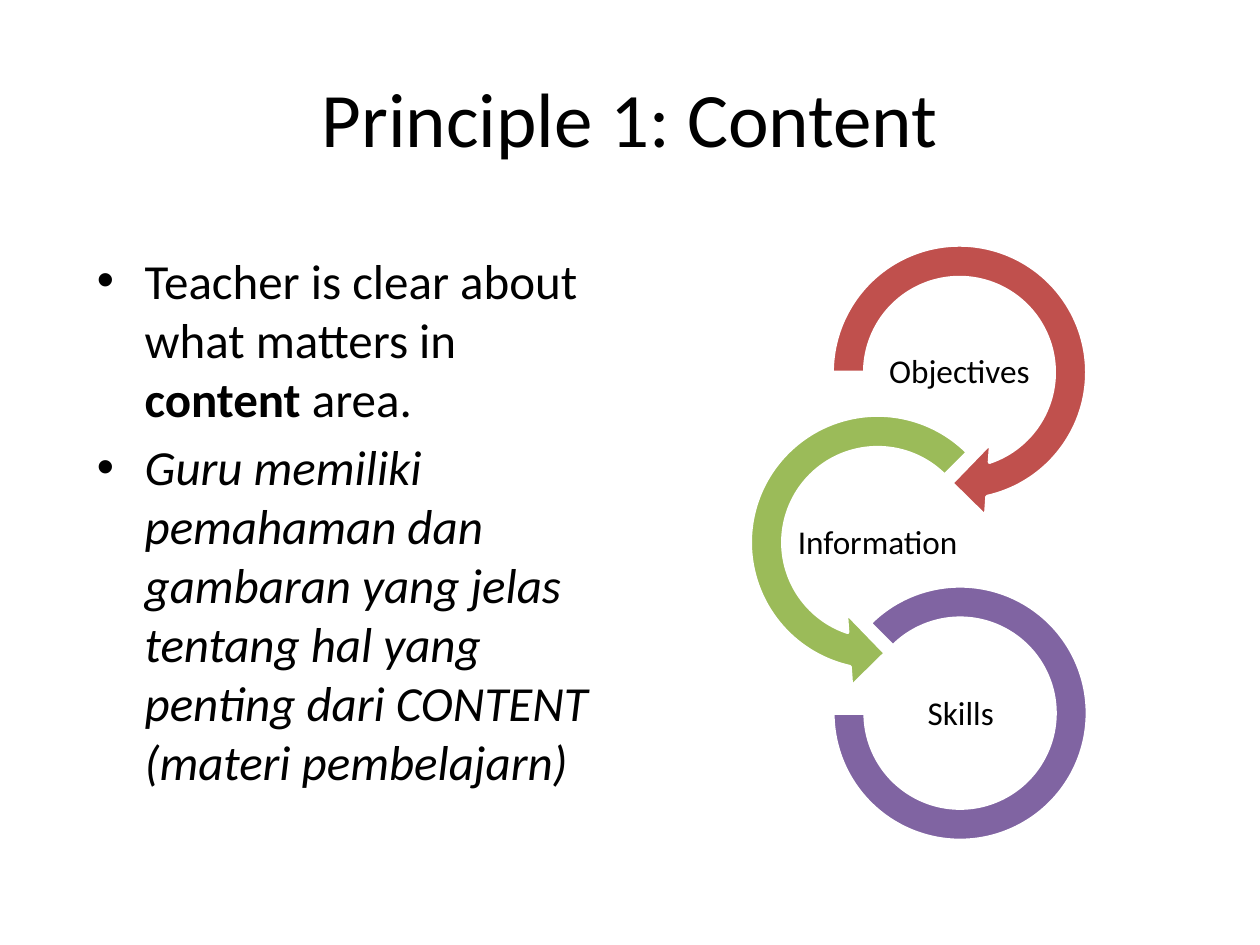
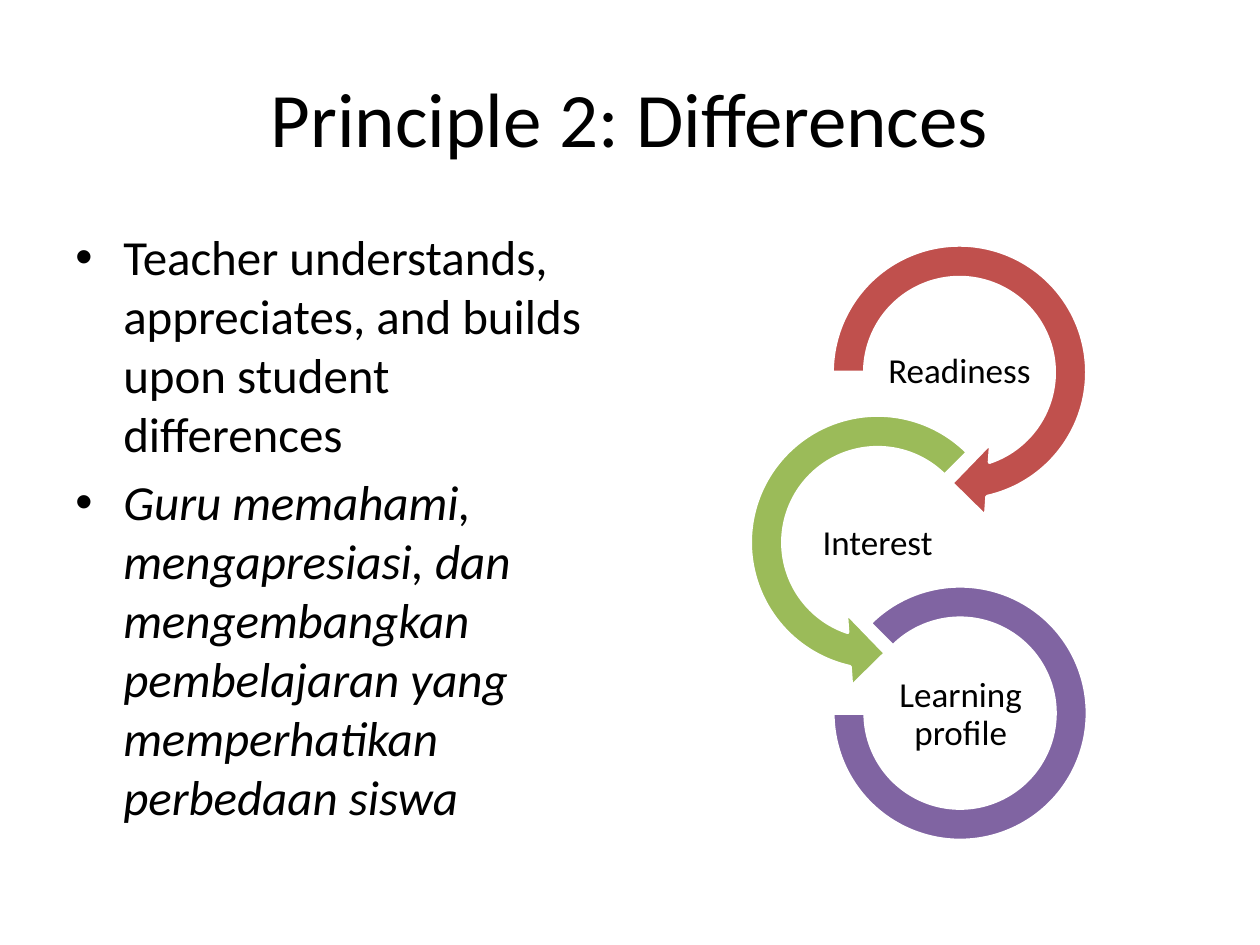
from lxml.etree import SubElement
from pptx import Presentation
from pptx.dml.color import RGBColor
from pptx.enum.shapes import MSO_SHAPE
from pptx.enum.text import MSO_ANCHOR, PP_ALIGN
from pptx.oxml.ns import qn
from pptx.util import Inches, Pt

FONT = "Calibri"
BLACK, WHITE = "000000", "FFFFFF"
TITLE_BOX = (0.5, 0.3, 9, 1.25)
LABEL_SIZE = (1.31, 0.65)

# Each body paragraph is a list of (text, style) runs.
SLIDES = [
    {
        "title": "Principle 1: Content",
        "body_box": (0.67, 1.94, 4.25, 4.65),
        "body": [
            [("Teacher is clear about what matters in ", ""),
             ("content", "bold"),
             (" area.", "")],
            [("Guru memiliki pemahaman dan gambaran yang jelas tentang hal "
              "yang penting dari CONTENT (materi pembelajarn)", "italic")],
        ],
        "labels": ["Objectives", "Information", "Skills"],
        "label_points": 19,
    },
    {
        "title": "Principle 2: Differences",
        "body_box": (0.5, 1.75, 4.42, 4.95),
        "body": [
            [("Teacher understands, appreciates, and builds upon student "
              "differences", "")],
            [("Guru memahami, mengapresiasi, dan mengembangkan pembelajaran "
              "yang memperhatikan perbedaan siswa", "italic")],
        ],
        "labels": ["Readiness", "Interest", "Learning profile"],
        "label_points": 20,
    },
]

# Ring: preset, box, adjustments, colour, label left and top
RINGS = [
    (MSO_SHAPE.CIRCULAR_ARROW, (6.44, 1.78, 2.35, 2.35),
     (0.11, 11.42, 45, 108, 0.125), "C0504D", (6.96, 2.63)),
    (MSO_SHAPE.LEFT_CIRCULAR_ARROW, (5.79, 3.13, 2.35, 2.35),
     (0.11, 11.42, 63, 189, 0.125), "9BBB59", (6.31, 3.99)),
    (MSO_SHAPE.BLOCK_ARC, (6.61, 4.65, 2.02, 2.02),
     (135, 108, 0.127), "8064A2", (6.97, 5.35)),
]


def color(hex_string):
    return RGBColor.from_string(hex_string)


def inches(box):
    return [Inches(length) for length in box]


def style(paragraph, points):
    paragraph.font.name = FONT
    paragraph.font.size = Pt(points)
    paragraph.font.color.rgb = color(BLACK)


def add_frame(shapes, box, anchor, inset=None):
    """Add a wrapping text box and return its text frame."""
    frame = shapes.add_textbox(*inches(box)).text_frame
    frame.word_wrap = True
    frame.vertical_anchor = anchor
    if inset is not None:
        frame.margin_left = frame.margin_right = Inches(inset)
        frame.margin_top = frame.margin_bottom = Inches(inset)
    return frame


def add_centred(shapes, text, box, points, inset=None):
    frame = add_frame(shapes, box, MSO_ANCHOR.MIDDLE, inset)
    paragraph = frame.paragraphs[0]
    paragraph.text = text
    paragraph.alignment = PP_ALIGN.CENTER
    style(paragraph, points)
    return paragraph


def add_bullet(paragraph):
    properties = paragraph._p.get_or_add_pPr()
    properties.set("marL", str(Inches(0.38)))
    properties.set("indent", str(-Inches(0.38)))
    SubElement(properties, qn("a:buFont"), typeface="Arial")
    SubElement(properties, qn("a:buChar"), char="•")


def add_body(slide, body, box, points=28):
    frame = add_frame(slide.shapes, box, MSO_ANCHOR.TOP)
    for index, runs in enumerate(body):
        paragraph = frame.add_paragraph() if index else frame.paragraphs[0]
        paragraph.space_before = Pt(points * 0.2)
        add_bullet(paragraph)
        style(paragraph, points)
        for text, emphasis in runs:
            run = paragraph.add_run()
            run.text = text
            if emphasis:
                setattr(run.font, emphasis, True)


def add_rings(slide, labels, points):
    diagram = slide.shapes.add_group_shape().shapes
    for label, (preset, box, adjustments, fill, corner) in zip(labels, RINGS):
        ring = diagram.add_shape(preset, *inches(box))
        for index, value in enumerate(adjustments):
            ring.adjustments[index] = value
        ring.shadow.inherit = False
        ring.fill.solid()
        ring.fill.fore_color.rgb = color(fill)
        ring.line.color.rgb = color(WHITE)
        ring.line.width = Pt(2)
        caption = add_centred(diagram, label, corner + LABEL_SIZE, points, 0.01)
        caption.line_spacing = 0.9
        caption.space_after = Pt(points * 0.35)


def main():
    deck = Presentation()
    deck.slide_width, deck.slide_height = Inches(10), Inches(7.5)
    for content in SLIDES:
        slide = deck.slides.add_slide(deck.slide_layouts[6])
        add_centred(slide.shapes, content["title"], TITLE_BOX, 44)
        add_body(slide, content["body"], content["body_box"])
        add_rings(slide, content["labels"], content["label_points"])
    deck.save("out.pptx")


if __name__ == "__main__":
    main()
